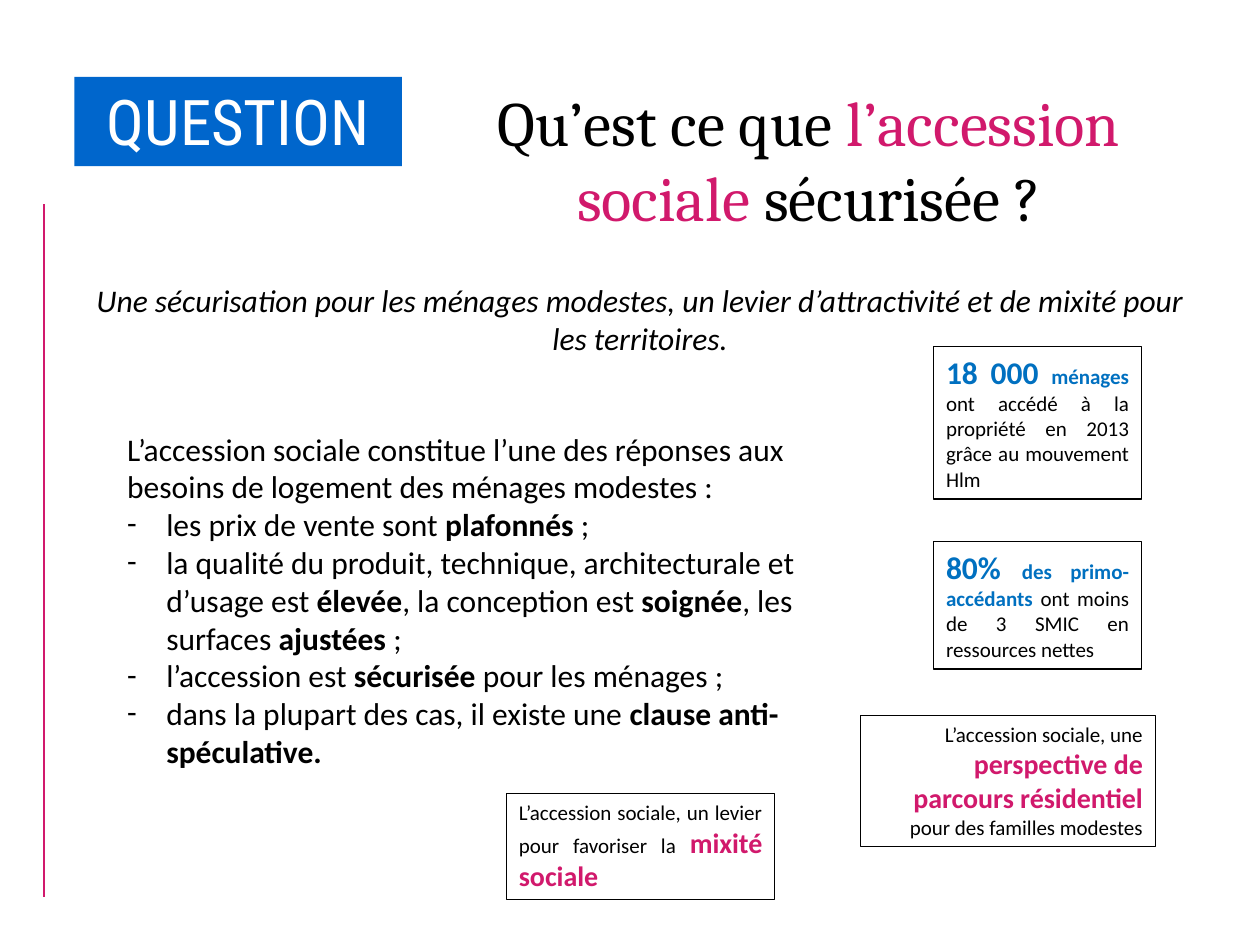
from lxml.etree import SubElement
from pptx import Presentation
from pptx.dml.color import RGBColor
from pptx.enum.shapes import MSO_CONNECTOR, MSO_SHAPE
from pptx.enum.text import MSO_ANCHOR, MSO_AUTO_SIZE, PP_ALIGN
from pptx.oxml.ns import qn
from pptx.util import Inches, Pt

WIDTH, HEIGHT = Inches(10), Inches(7.5)
BLACK, WHITE, PINK = "000000", "FFFFFF", "D1196C"
BANNER_BLUE, FIGURE_BLUE = "0066CC", "0070C0"
LEFT_EDGE = 5.9
TOP_EDGE = 8.13

INTRODUCTION = (
    "L’accession sociale constitue l’une des réponses aux "
    "besoins de logement des ménages modestes :"
)
# Every second run of an answer is bold.
ANSWERS = [
    ["les prix de vente sont ", "plafonnés", " ;"],
    ["la qualité du produit, technique, architecturale et d’usage est ", "élevée",
     ", la conception est ", "soignée", ", les surfaces ", "ajustées", " ;"],
    ["l’accession est ", "sécurisée", " pour les ménages ;"],
    ["dans la plupart des cas, il existe une ", "clause anti-spéculative."],
]

# Area in percent of the slide, alignment, runs of (text, size, colour, bold).
KEY_FACTS = [
    ((74.1, 36.67, 16.5, 16.13), PP_ALIGN.JUSTIFY, [
        ("18 000 ", 18, FIGURE_BLUE, True),
        ("ménages ", 12, FIGURE_BLUE, True),
        ("ont accédé à la propriété en 2013 grâce au mouvement Hlm", 12, BLACK, False)]),
    ((74.1, 57.33, 16.5, 13.47), PP_ALIGN.JUSTIFY, [
        ("80% ", 18, FIGURE_BLUE, True),
        ("des primo-accédants ", 12, FIGURE_BLUE, True),
        ("ont moins de 3 SMIC en ressources nettes", 12, BLACK, False)]),
    ((68.3, 75.73, 23.4, 13.87), PP_ALIGN.RIGHT, [
        ("L’accession sociale, une ", 12, BLACK, False),
        ("perspective de parcours résidentiel ", 16, PINK, True),
        ("pour des familles modestes", 12, BLACK, False)]),
    ((40.2, 84, 21.3, 11.2), PP_ALIGN.JUSTIFY, [
        ("L’accession sociale, un levier pour favoriser la ", 12, BLACK, False),
        ("mixité sociale", 16, PINK, True)]),
]


def color(value):
    return RGBColor.from_string(value)


def across(percent):
    return round(WIDTH * percent / 100)


def down(percent):
    return round(HEIGHT * percent / 100)


def area(left, top, width, height):
    """Turn shares of the slide, in percent, into lengths."""
    return across(left), down(top), across(width), down(height)


def move(shape, *shares):
    shape.left, shape.top, shape.width, shape.height = area(*shares)


def prepare_frame(shape):
    frame = shape.text_frame
    frame.word_wrap = True
    frame.auto_size = MSO_AUTO_SIZE.SHAPE_TO_FIT_TEXT
    frame.vertical_anchor = MSO_ANCHOR.TOP
    return frame


def add_run(paragraph, text, size, text_color=BLACK, bold=False, italic=False,
            font_name="Calibri"):
    run = paragraph.add_run()
    run.text = text
    font = run.font
    font.name, font.size = font_name, Pt(size)
    font.bold, font.italic = bold, italic
    font.color.rgb = color(text_color)


def add_rectangle(slide, shares, fill=None, outline=None):
    shape = slide.shapes.add_shape(MSO_SHAPE.RECTANGLE, *area(*shares))
    shape.shadow.inherit = False
    if fill:
        shape.fill.solid()
        shape.fill.fore_color.rgb = color(fill)
    else:
        shape.fill.background()
    if outline:
        shape.line.color.rgb = color(outline)
        shape.line.width = Pt(0.75)
    else:
        shape.line.fill.background()
    return shape


def set_bullet(paragraph, character=None):
    """Set a hanging bullet, or remove the one from the template."""
    properties = paragraph._p.get_or_add_pPr()
    indent = Inches(0.31) if character else 0
    properties.set("marL", str(indent))
    properties.set("indent", str(-indent))
    if character:
        SubElement(properties, qn("a:buFont"), typeface="Calibri")
        SubElement(properties, qn("a:buChar"), char=character)
    else:
        SubElement(properties, qn("a:buNone"))


def fill_title(slide):
    title = slide.shapes.title
    move(title, 32.7, TOP_EDGE, 63, 17.47)
    paragraph = prepare_frame(title).paragraphs[0]
    paragraph.alignment = PP_ALIGN.CENTER
    for text, text_color in [("Qu’est ce que ", BLACK),
                             ("l’accession sociale ", PINK),
                             ("sécurisée ?", BLACK)]:
        add_run(paragraph, text, 36, text_color, font_name="Cambria")


def fill_answers(slide):
    body = slide.placeholders[1]
    move(body, 9.1, 44.8, 59.1, 41.73)
    frame = prepare_frame(body)
    introduction = frame.paragraphs[0]
    introduction.space_before = Pt(0)
    set_bullet(introduction)
    add_run(introduction, INTRODUCTION, 18)
    for answer in ANSWERS:
        paragraph = frame.add_paragraph()
        paragraph.space_before = Pt(0)
        set_bullet(paragraph, "-")
        for position, text in enumerate(answer):
            add_run(paragraph, text, 18, bold=position % 2 == 1)


def add_side_line(slide):
    x = across(3.5)
    line = slide.shapes.add_connector(
        MSO_CONNECTOR.STRAIGHT, x, down(21.6), x, down(94.93))
    line.line.color.rgb = color(PINK)
    line.line.width = Pt(1.5)
    SubElement(line._element.spPr, qn("a:effectLst"))


def add_banner(slide):
    banner = add_rectangle(slide, (LEFT_EDGE, TOP_EDGE, 26, 9.47), fill=BANNER_BLUE)
    paragraph = prepare_frame(banner).paragraphs[0]
    paragraph.alignment = PP_ALIGN.CENTER
    add_run(paragraph, "QUESTION", 36, WHITE, font_name="Roboto Condensed")


def add_subtitle(slide):
    subtitle = slide.shapes.add_textbox(*area(LEFT_EDGE, 29.07, 89.8, 9.47))
    paragraph = prepare_frame(subtitle).paragraphs[0]
    paragraph.alignment = PP_ALIGN.CENTER
    add_run(paragraph, "Une sécurisation pour les ménages modestes, un levier "
            "d’attractivité et de mixité pour les territoires.", 18, italic=True)


def add_key_fact(slide, shares, alignment, runs):
    box = add_rectangle(slide, shares, outline=BLACK)
    paragraph = prepare_frame(box).paragraphs[0]
    paragraph.alignment = alignment
    for run in runs:
        add_run(paragraph, *run)


def main():
    presentation = Presentation()
    presentation.slide_width, presentation.slide_height = WIDTH, HEIGHT
    slide = presentation.slides.add_slide(presentation.slide_layouts[1])
    fill_title(slide)
    add_side_line(slide)
    add_banner(slide)
    add_subtitle(slide)
    fill_answers(slide)
    for fact in KEY_FACTS:
        add_key_fact(slide, *fact)
    presentation.save("out.pptx")


if __name__ == "__main__":
    main()
